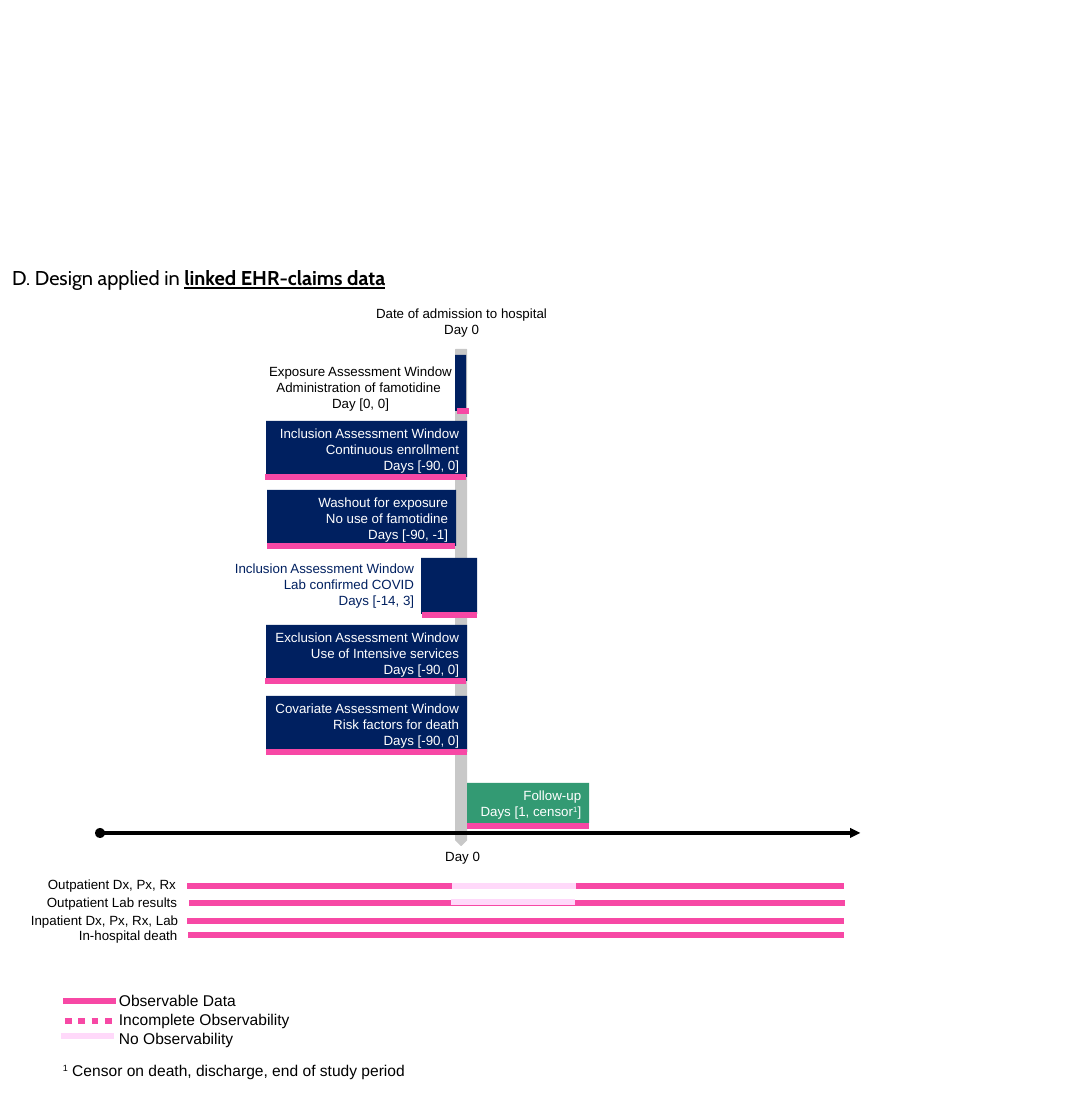
from lxml import etree
from pptx import Presentation
from pptx.dml.color import RGBColor
from pptx.enum.dml import MSO_LINE
from pptx.enum.shapes import MSO_CONNECTOR, MSO_SHAPE
from pptx.enum.text import MSO_ANCHOR, PP_ALIGN
from pptx.oxml.ns import qn
from pptx.util import Emu, Pt

PX = 11430
SLIDE_WIDTH, SLIDE_HEIGHT = Emu(12192000), Emu(12801600)
LEFT, CENTER, RIGHT = PP_ALIGN.LEFT, PP_ALIGN.CENTER, PP_ALIGN.RIGHT
TOP, MIDDLE = MSO_ANCHOR.TOP, MSO_ANCHOR.MIDDLE
RECTANGLE, PENTAGON = MSO_SHAPE.RECTANGLE, MSO_SHAPE.PENTAGON
STRAIGHT, DOTTED = MSO_CONNECTOR.STRAIGHT, MSO_LINE.ROUND_DOT
NAVY, GREEN, GREY = "002060", "339A73", "C8C8C8"
PINK, PALE, BLACK, WHITE = "F748A5", "FFD9FA", "000000", "FFFFFF"

HEADING = ("D. Design applied in ", "linked EHR-claims data")
DAY_ZERO_BAR = (213, 592, 496, 11)
TIMELINE = (100, 860, 833)

# left, top, width, height, fill, anchor, lines
WINDOWS = [
    (421, 558, 56, 56, NAVY, TOP, []),
    (267, 490, 189, 56, NAVY, TOP,
     ["Washout for exposure", "No use of famotidine", "Days [-90, -1]"]),
    (266, 625, 201, 56, NAVY, TOP,
     ["Exclusion Assessment Window", "Use of Intensive services", "Days [-90, 0]"]),
    (266, 696, 201, 56, NAVY, TOP,
     ["Covariate Assessment Window", "Risk factors for death", "Days [-90, 0]"]),
    (266, 421, 201, 56, NAVY, TOP,
     ["Inclusion Assessment Window", "Continuous enrollment", "Days [-90, 0]"]),
    (455, 355, 11, 56, NAVY, TOP, []),
    (467, 783, 122, 40, GREEN, MIDDLE,
     ["Follow-up", ("Days [1, censor", "1", "]")]),
]

# left, top, width, height, alignment, size, colour, lines
LABELS = [
    (225, 556, 197, 73, RIGHT, 12, NAVY,
     ["Inclusion Assessment Window", "Lab confirmed COVID", " Days [-14, 3]"]),
    (196, 844, 533, 24, CENTER, 12, BLACK, ["Day 0"]),
    (367, 301, 189, 40, CENTER, 12, BLACK, ["Date of admission to hospital", "Day 0"]),
    (253, 359, 215, 57, CENTER, 12, BLACK,
     ["Exposure Assessment Window", "Administration of famotidine ", "Day [0, 0]"]),
    (111, 987, 134, 27, LEFT, 14, BLACK, ["Observable Data"]),
    (111, 1006, 188, 27, LEFT, 14, BLACK, ["Incomplete Observability"]),
    (111, 1025, 132, 27, LEFT, 14, BLACK, ["No Observability"]),
    (40, 872, 146, 24, LEFT, 12, BLACK, ["Outpatient Dx, Px, Rx"]),
    (39, 890, 148, 24, LEFT, 12, BLACK, ["Outpatient Lab results"]),
    (23, 908, 165, 24, LEFT, 12, BLACK, ["Inpatient Dx, Px, Rx, Lab"]),
    (71, 923, 116, 24, LEFT, 12, BLACK, ["In-hospital death"]),
    (55, 1057, 361, 27, LEFT, 14, BLACK,
     [("", "1", " Censor on death, discharge, end of study period")]),
]

# start, end, height on the slide, colour
DATA_BARS = [
    (422, 462, 615, PINK), (265, 466, 477, PINK), (267, 455, 546, PINK),
    (457, 469, 411, PINK), (455, 477, 615, PINK), (265, 466, 681, PINK),
    (266, 467, 752, PINK), (467, 589, 826, PINK),
    (187, 844, 921, PINK), (189, 845, 903, PINK), (451, 575, 902, PALE),
    (187, 844, 886, PINK), (452, 576, 886, PALE), (188, 844, 935, PINK),
    (63, 116, 1001, PINK), (61, 114, 1036, PALE),
]
INCOMPLETE_BAR = (65, 118, 1021, PINK)


def px(*values):
    return [Emu(value * PX) for value in values]


def rgb(colour):
    return RGBColor.from_string(colour)


def style(font, size, colour, name="Arial"):
    font.size, font.name = Pt(size), name
    font.color.rgb = rgb(colour)


def write(frame, lines, align, size, colour, anchor=TOP):
    frame.word_wrap = True
    frame.vertical_anchor = anchor
    for index, line in enumerate(lines):
        paragraph = frame.paragraphs[0] if index == 0 else frame.add_paragraph()
        paragraph.alignment = align
        if isinstance(line, str):
            paragraph.text = line
        else:
            before, superscript, after = line
            for part in filter(None, (before, superscript, after)):
                run = paragraph.add_run()
                run.text = part
                if part == superscript:
                    run.font._element.set("baseline", "30000")
        for run in paragraph.runs:
            style(run.font, size, colour)


def add_block(slide, kind, box, fill):
    block = slide.shapes.add_shape(kind, *px(*box))
    block.shadow.inherit = False
    block.fill.solid()
    block.fill.fore_color.rgb = rgb(fill)
    block.line.fill.background()
    return block


def add_bar(slide, start, end, y, colour, weight=6):
    bar = slide.shapes.add_connector(STRAIGHT, *px(start, y, end, y))
    bar.line.color.rgb = rgb(colour)
    bar.line.width = Pt(weight)
    etree.SubElement(bar._element.spPr, qn("a:effectLst"))
    return bar


def add_heading(slide):
    title = slide.shapes.title
    title.left, title.top, title.width, title.height = px(4, 260, 953, 36)
    frame = title.text_frame
    frame.word_wrap = True
    frame.vertical_anchor = MIDDLE
    paragraph = frame.paragraphs[0]
    paragraph.alignment = LEFT
    for part in HEADING:
        run = paragraph.add_run()
        run.text = part
        style(run.font, 18, BLACK, "Cabin")
    run.font.bold = run.font.underline = True


def main():
    deck = Presentation()
    deck.slide_width, deck.slide_height = SLIDE_WIDTH, SLIDE_HEIGHT
    slide = deck.slides.add_slide(deck.slide_layouts[5])
    add_heading(slide)

    day_zero = add_block(slide, PENTAGON, DAY_ZERO_BAR, GREY)
    day_zero.rotation = 90
    day_zero.line.color.rgb = rgb(GREY)
    day_zero.line.width = Pt(1)

    timeline = add_bar(slide, *TIMELINE, BLACK, 3)
    outline = timeline.line._get_or_add_ln()
    for end, kind in (("a:headEnd", "oval"), ("a:tailEnd", "triangle")):
        etree.SubElement(outline, qn(end), type=kind)

    for *box, fill, anchor, lines in WINDOWS:
        window = add_block(slide, RECTANGLE, box, fill)
        write(window.text_frame, lines, RIGHT, 12, WHITE, anchor)

    for *box, align, size, colour, lines in LABELS:
        label = slide.shapes.add_textbox(*px(*box))
        write(label.text_frame, lines, align, size, colour)

    for bar in DATA_BARS:
        add_bar(slide, *bar)
    add_bar(slide, *INCOMPLETE_BAR).line.dash_style = DOTTED

    deck.save("out.pptx")


if __name__ == "__main__":
    main()
